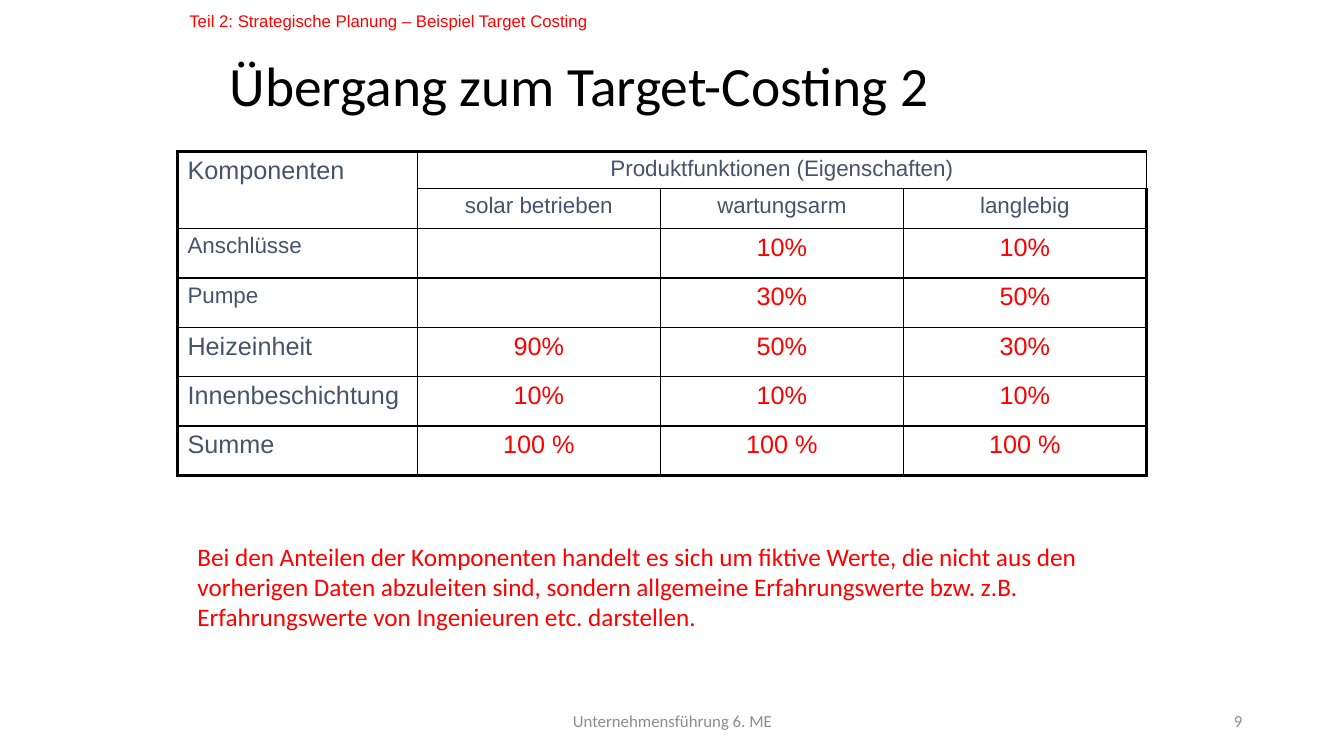
"""Build the slide on target costing with its table of component shares."""
from lxml import etree
from pptx import Presentation
from pptx import util as u
from pptx.dml.color import RGBColor
from pptx.enum import text
from pptx.oxml import ns

BLACK = RGBColor(0, 0, 0)
WHITE = RGBColor(255, 255, 255)
RED = RGBColor(255, 0, 0)
SLATE = RGBColor(0x44, 0x54, 0x6A)
GREY = RGBColor(0x8C, 0x8C, 0x8C)
LEFT, CENTER, RIGHT = text.PP_ALIGN.LEFT, text.PP_ALIGN.CENTER, text.PP_ALIGN.RIGHT
TOP, MIDDLE = text.MSO_ANCHOR.TOP, text.MSO_ANCHOR.MIDDLE
THIN, THICK = u.Pt(1), u.Pt(2.25)


def write(frame, words, size, font, color, align):
    paragraph = frame.paragraphs[0]
    paragraph.alignment = align
    run = paragraph.add_run()
    run.text = words
    run.font.size = u.Pt(size)
    run.font.name = font
    run.font.color.rgb = color
    return paragraph


def draw_border(cell, position, side, width):
    line = etree.Element(ns.qn(f"a:ln{side}"), w=str(int(width)))
    fill = etree.SubElement(line, ns.qn("a:solidFill"))
    etree.SubElement(fill, ns.qn("a:srgbClr"), val=str(BLACK))
    cell._tc.get_or_add_tcPr().insert(position, line)


presentation = Presentation()
presentation.slide_width = u.Inches(13.33)
presentation.slide_height = u.Inches(7.5)
slide = presentation.slides.add_slide(presentation.slide_layouts[6])

NOTE = ("Bei den Anteilen der Komponenten handelt es sich um fiktive Werte, "
        "die nicht aus den vorherigen Daten abzuleiten sind, sondern allgemeine "
        "Erfahrungswerte bzw. z.B. Erfahrungswerte von Ingenieuren etc. darstellen.")
text_boxes = [
    ((4.42, 6.95, 4.5, 0.4), "Unternehmensführung 6. ME", 12, "Calibri", GREY, CENTER, MIDDLE, 1),
    ((9.42, 6.95, 3, 0.4), "9", 12, "Calibri", GREY, RIGHT, MIDDLE, 1),
    ((2.18, 0.54, 8.89, 0.67), "Übergang zum Target-Costing 2", 39.6, "Calibri", BLACK, LEFT, MIDDLE, 0.9),
    ((1.86, 5.32, 9.53, 1), NOTE, 18, "Calibri", RED, LEFT, TOP, 1),
    ((1.78, 0.06, 4.76, 0.3), "Teil 2: Strategische Planung – Beispiel Target Costing",
     12, "Arial", RED, LEFT, TOP, 1),
]
for place, words, size, font, color, align, anchor, spacing in text_boxes:
    frame = slide.shapes.add_textbox(*map(u.Inches, place)).text_frame
    frame.word_wrap = True
    frame.vertical_anchor = anchor
    write(frame, words, size, font, color, align).line_spacing = spacing

COLUMN_WIDTHS = [2.38] + [2.41] * 3
ROW_HEIGHTS = [0.35, 0.38] + [0.49] * 5
HEADER_ROWS = 2
SMALL_LABELS = ("Anschlüsse", "Pumpe")
rows = [
    ("Komponenten", "Produktfunktionen (Eigenschaften)", "", ""),
    ("", "solar betrieben", "wartungsarm", "langlebig"),
    ("Anschlüsse", "", "10%", "10%"),
    ("Pumpe", "", "30%", "50%"),
    ("Heizeinheit", "90%", "50%", "30%"),
    ("Innenbeschichtung", "10%", "10%", "10%"),
    ("Summe", "100 %", "100 %", "100 %"),
]
table = slide.shapes.add_table(
    len(rows), len(COLUMN_WIDTHS), u.Inches(1.76), u.Inches(1.5),
    u.Inches(sum(COLUMN_WIDTHS)), u.Inches(sum(ROW_HEIGHTS))).table
table.first_row = table.horz_banding = False
for column, width in zip(table.columns, COLUMN_WIDTHS):
    column.width = u.Inches(width)
for row, height in zip(table.rows, ROW_HEIGHTS):
    row.height = u.Inches(height)
table.cell(0, 0).merge(table.cell(1, 0))
table.cell(0, 1).merge(table.cell(0, 3))

for r, row in enumerate(rows):
    for c, words in enumerate(row):
        cell = table.cell(r, c)
        cell.fill.solid()
        cell.fill.fore_color.rgb = WHITE
        outer_sides = {"L": c == 0, "R": c == len(row) - 1, "T": r == 0, "B": r == len(rows) - 1}
        for position, (side, outer) in enumerate(outer_sides.items()):
            draw_border(cell, position, side, THICK if outer else THIN)
        if words:
            heading = r < HEADER_ROWS and c > 0
            size = 16 if heading or words in SMALL_LABELS else 18
            color = SLATE if heading or c == 0 else RED
            write(cell.text_frame, words, size, "Arial", color, CENTER if c else LEFT)

presentation.save("out.pptx")
